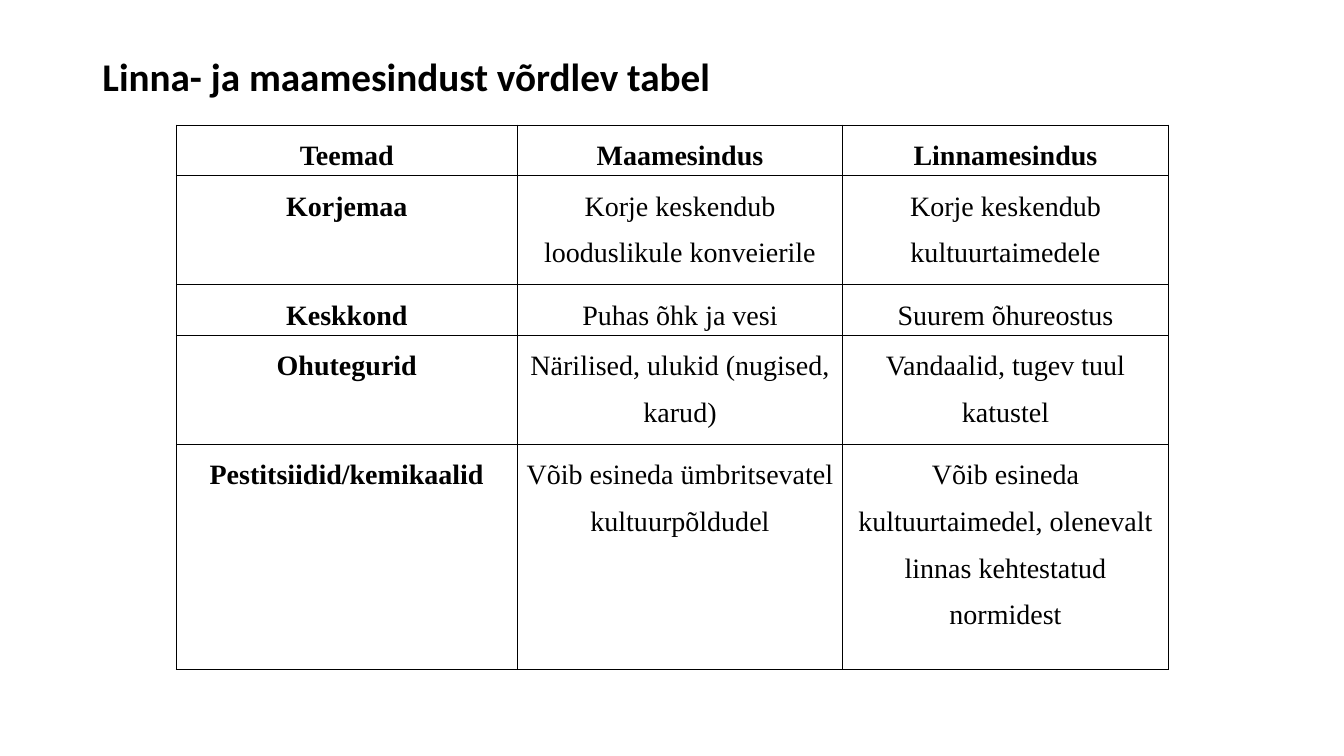
from dataclasses import dataclass

from pptx import Presentation
from pptx.dml.color import RGBColor
from pptx.enum import text
from pptx.oxml import parse_xml
from pptx.oxml import ns
from pptx.util import Pt


@dataclass(frozen=True)
class Theme:
    ink: str = "000000"
    title_font: str = "Calibri"
    table_font: str = "Times New Roman"
    title_size: int = 28
    table_size: int = 20
    border: int = 1


THEME = Theme()

ROWS = [
    ("Teemad", "Maamesindus", "Linnamesindus"),
    ("Korjemaa", "Korje keskendub looduslikule konveierile",
     "Korje keskendub kultuurtaimedele"),
    ("Keskkond", "Puhas õhk ja vesi", "Suurem õhureostus"),
    ("Ohutegurid", "Närilised, ulukid (nugised, karud)",
     "Vandaalid, tugev tuul katustel"),
    ("Pestitsiidid/kemikaalid", "Võib esineda ümbritsevatel kultuurpõldudel",
     "Võib esineda kultuurtaimedel, olenevalt linnas kehtestatud normidest"),
]
# Column and row sizes in points
COL_WIDTHS = (243.5, 232.5, 232.5)
ROW_HEIGHTS = (36, 78, 36, 78, 160.5)


def write(tf, content, *, font, size, bold=False, align=text.PP_ALIGN.LEFT,
          line=1.0, before=0):
    p = tf.paragraphs[0]
    p.alignment = align
    p.line_spacing = line
    p.space_before = Pt(before)
    r = p.add_run()
    r.text = content
    r.font.name = font
    r.font.size = Pt(size)
    r.font.bold = bold
    r.font.color.rgb = RGBColor.from_string(THEME.ink)


def set_borders(cell):
    tc_pr = cell._tc.get_or_add_tcPr()
    # Border lines come before the fill in the cell properties
    for i, side in enumerate(("lnL", "lnR", "lnT", "lnB")):
        tc_pr.insert(i, parse_xml(
            f'<a:{side} {ns.nsdecls("a")} w="{Pt(THEME.border)}"><a:solidFill>'
            f'<a:srgbClr val="{THEME.ink}"/></a:solidFill></a:{side}>'))


def add_title(s, left, top, width, height):
    title = s.shapes.title
    title.left, title.top = Pt(left), Pt(top)
    title.width, title.height = Pt(width), Pt(height)
    tf = title.text_frame
    tf.word_wrap = True
    tf.vertical_anchor = text.MSO_ANCHOR.MIDDLE
    write(tf, "Linna- ja maamesindust võrdlev tabel", font=THEME.title_font,
          size=THEME.title_size, bold=True, line=0.9)


def add_comparison(s, left, top, width, height):
    table = s.shapes.add_table(len(ROWS), len(COL_WIDTHS), Pt(left), Pt(top),
                               Pt(width), Pt(height)).table
    table.horz_banding = False
    # Share the box out in proportion to the listed sizes
    for col, w in zip(table.columns, COL_WIDTHS):
        col.width = Pt(width * w / sum(COL_WIDTHS))
    for row, h in zip(table.rows, ROW_HEIGHTS):
        row.height = Pt(height * h / sum(ROW_HEIGHTS))

    for i, row in enumerate(ROWS):
        for j, content in enumerate(row):
            cell = table.cell(i, j)
            cell.fill.background()
            cell.margin_left = cell.margin_right = Pt(5)
            cell.margin_top = cell.margin_bottom = Pt(0)
            set_borders(cell)
            write(cell.text_frame, content, font=THEME.table_font,
                  size=THEME.table_size, bold=i == 0 or j == 0,
                  align=text.PP_ALIGN.CENTER, line=1.5, before=10)


def main():
    prs = Presentation()
    prs.slide_width, prs.slide_height = Pt(960), Pt(540)
    s = prs.slides.add_slide(prs.slide_layouts[5])
    # Heading
    add_title(s, 66, 28.5, 828, 55.5)
    # Comparison table
    add_comparison(s, 126, 89.5, sum(COL_WIDTHS), sum(ROW_HEIGHTS))
    prs.save("out.pptx")


if __name__ == "__main__":
    main()
